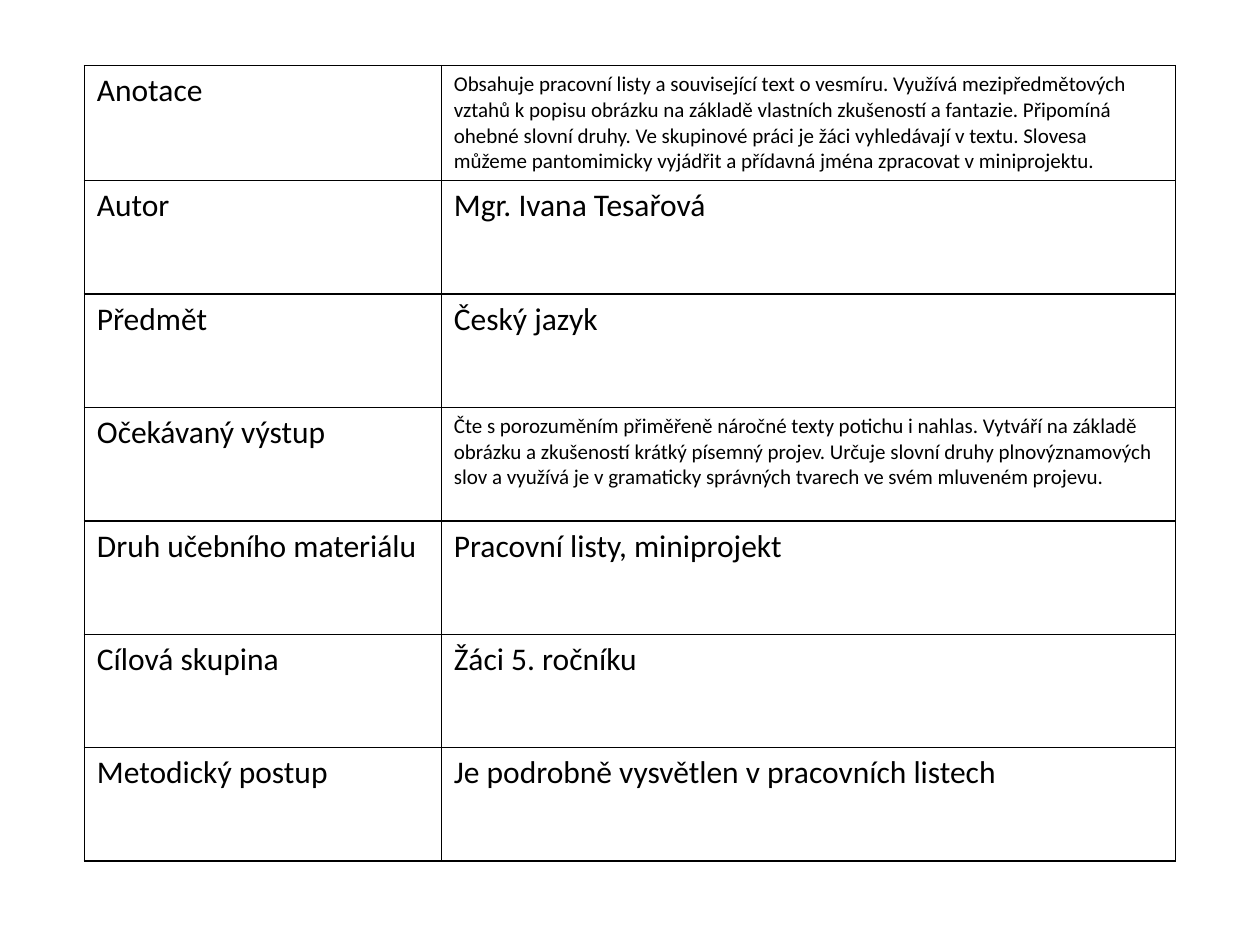
from dataclasses import dataclass

import pptx
import pptx.dml.color
import pptx.oxml
import pptx.oxml.ns
import pptx.util

Pt = pptx.util.Pt
RGB = pptx.dml.color.RGBColor


@dataclass(frozen=True)
class Theme:
    font: str = "Calibri"
    ink: str = "000000"
    paper: str = "FFFFFF"
    large: int = 18
    small: int = 12
    line: int = 1


THEME = Theme()
LEFT, TOP = 48.2, 37.5
WIDTHS = (204, 419.6)
HEIGHT = 64.8
LONG = 100  # texts beyond this many characters take the small size

ROWS = (
    ("Anotace",
     "Obsahuje pracovní listy a související text o vesmíru. Využívá "
     "mezipředmětových vztahů k popisu obrázku na základě vlastních "
     "zkušeností a fantazie. Připomíná ohebné slovní druhy. Ve skupinové "
     "práci je žáci vyhledávají v textu. Slovesa můžeme pantomimicky "
     "vyjádřit a přídavná jména zpracovat v miniprojektu."),
    ("Autor", "Mgr. Ivana Tesařová"),
    ("Předmět", "Český jazyk"),
    ("Očekávaný výstup",
     "Čte s porozuměním přiměřeně náročné texty potichu i nahlas. Vytváří "
     "na základě obrázku a zkušeností krátký písemný projev. Určuje slovní "
     "druhy plnovýznamových slov a využívá je v gramaticky správných "
     "tvarech ve svém mluveném projevu."),
    ("Druh učebního materiálu", "Pracovní listy, miniprojekt"),
    ("Cílová skupina", "Žáci 5. ročníku"),
    ("Metodický postup", "Je podrobně vysvětlen v pracovních listech"),
)


def add_edges(cell):
    """Draw a solid line on all four sides of the cell."""
    props = cell._tc.get_or_add_tcPr()
    for side in ("lnL", "lnR", "lnT", "lnB"):
        props.append(pptx.oxml.parse_xml(
            f'<a:{side} {pptx.oxml.ns.nsdecls("a")} w="{Pt(THEME.line)}">'
            f'<a:solidFill><a:srgbClr val="{THEME.ink}"/></a:solidFill>'
            f'</a:{side}>'))


def fill_cell(cell, text):
    add_edges(cell)
    cell.fill.solid()
    cell.fill.fore_color.rgb = RGB.from_string(THEME.paper)
    cell.text = text
    font = cell.text_frame.paragraphs[0].font
    font.name = THEME.font
    font.size = Pt(THEME.small if len(text) > LONG else THEME.large)
    font.color.rgb = RGB.from_string(THEME.ink)


def add_grid(slide):
    frame = slide.shapes.add_table(
        len(ROWS), len(WIDTHS), Pt(LEFT), Pt(TOP),
        Pt(sum(WIDTHS)), Pt(HEIGHT * len(ROWS)))
    table = frame.table
    table.first_row = table.horz_banding = False
    for col, width in zip(table.columns, WIDTHS):
        col.width = Pt(width)
    for row, texts in zip(table.rows, ROWS):
        row.height = Pt(HEIGHT)
        for cell, text in zip(row.cells, texts):
            fill_cell(cell, text)


def main():
    deck = pptx.Presentation()
    deck.slide_width, deck.slide_height = Pt(720), Pt(540)
    blank = deck.slide_layouts[6]
    add_grid(deck.slides.add_slide(blank))
    deck.save("out.pptx")


if __name__ == "__main__":
    main()
